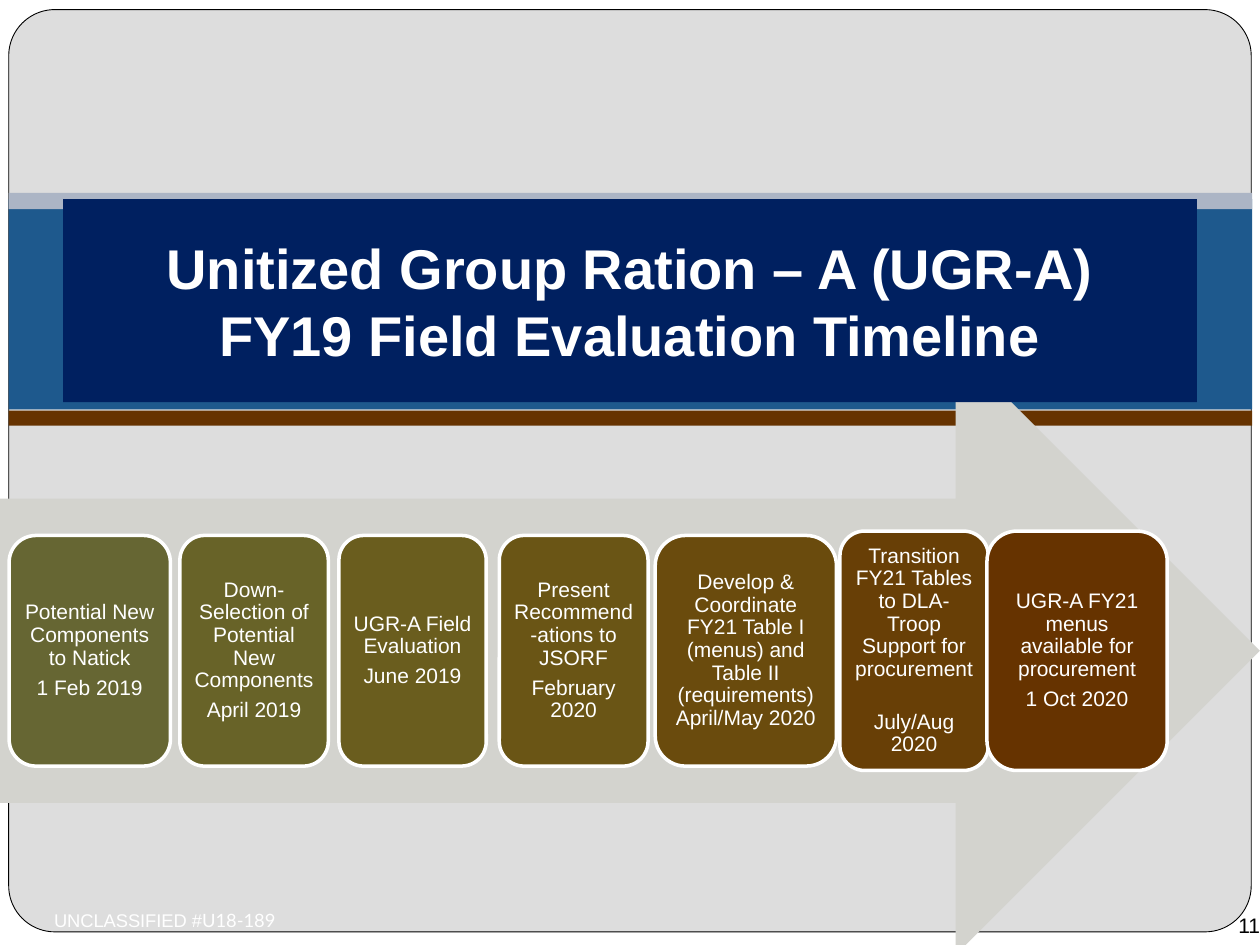
import pptx
import pptx.util
import pptx.oxml.ns
from pptx.dml.color import RGBColor
from pptx.enum.shapes import MSO_SHAPE
from pptx.enum.text import MSO_ANCHOR, MSO_AUTO_SIZE, PP_ALIGN

Pt = pptx.util.Pt

COLORS = {
    "white": "FFFFFF", "black": "000000", "panel": "DDDDDD", "blue": "1E598D",
    "mist": "ACB5C5", "brown": "663300", "arrow": "D3D3CE", "navy": "002060",
}
TITLE = "Unitized Group Ration – A (UGR-A)\vFY19 Field Evaluation Timeline"
BANDS = [("blue", 113.8, 120.2), ("mist", 110.2, 9.4), ("brown", 234.7, 8.6)]
STEPS = [
    (["Potential New Components to Natick", "1 Feb 2019"], "666633", 5.2, 92.2),
    (["Down-Selection of Potential New Components", "April 2019"], "686328", 102.8, 84.8),
    (["UGR-A Field Evaluation", "June 2019"], "6A5D1E", 193.7, 84.2),
    (["Present Recommend-ations to JSORF", "February 2020"], "6A5515", 285.3, 85),
    (["Develop & Coordinate FY21 Table I (menus) and Table II (requirements) April/May 2020"],
     "6A4B0D", 374.4, 103.6),
    (["Transition FY21 Tables to DLA-Troop Support for procurement", "July/Aug 2020"],
     "683F06", 480, 84.8),
    (["UGR-A FY21 menus available for procurement", "1 Oct 2020"], "663300", 564, 103),
]
STEP_CENTER = 371.9
STEP_HEIGHT, LATE_STEP_HEIGHT = 131.8, 136.8
LATE_STEPS_FROM = 5
EXTRA_GAP = {5: 13}


def rgb(name):
    return RGBColor.from_string(COLORS.get(name, name))


def add_block(kind, left, top, width, height, fill, line=None, line_width=0):
    block = slide.shapes.add_shape(kind, Pt(left), Pt(top), Pt(width), Pt(height))
    block.shadow.inherit = False
    block.fill.solid()
    block.fill.fore_color.rgb = rgb(fill)
    if line:
        block.line.color.rgb = rgb(line)
        block.line.width = Pt(line_width)
    else:
        block.line.fill.background()
    return block


def add_label(left, top, width, height):
    label = slide.shapes.add_textbox(Pt(left), Pt(top), Pt(width), Pt(height))
    label.text_frame.word_wrap = True
    return label.text_frame


def set_insets(frame, inset):
    frame.margin_left = frame.margin_right = Pt(inset)
    frame.margin_top = frame.margin_bottom = Pt(inset)


def style_runs(paragraph, size, color, font="Arial", bold=False):
    for run in paragraph.runs:
        run.font.name = font
        run.font.size = Pt(size)
        run.font.bold = bold
        run.font.color.rgb = rgb(color)


deck = pptx.Presentation()
deck.slide_width, deck.slide_height = Pt(720), Pt(540)
slide = deck.slides.add_slide(deck.slide_layouts[5])
slide.background.fill.solid()
slide.background.fill.fore_color.rgb = rgb("white")

panel = add_block(MSO_SHAPE.ROUNDED_RECTANGLE, 5, 5.5, 710, 527, "panel", "black", 0.5)
panel.adjustments[0] = 0.05
for color, top, height in BANDS:
    add_block(MSO_SHAPE.RECTANGLE, 5, top, 710.5, height, color)
add_block(MSO_SHAPE.RIGHT_ARROW, 0, 198, 720, 347.8, "arrow")

for index, (lines, color, left, width) in enumerate(STEPS):
    height = LATE_STEP_HEIGHT if index >= LATE_STEPS_FROM else STEP_HEIGHT
    step = add_block(MSO_SHAPE.ROUNDED_RECTANGLE, left, STEP_CENTER - height / 2,
                     width, height, color, "white", 2)
    frame = step.text_frame
    frame.word_wrap = True
    frame.vertical_anchor = MSO_ANCHOR.MIDDLE
    set_insets(frame, 3.6)
    frame.text = "\n".join(lines)
    for paragraph in frame.paragraphs:
        paragraph.alignment = PP_ALIGN.CENTER
        paragraph.line_spacing = 0.9
        paragraph.space_after = Pt(4.2)
        style_runs(paragraph, 12, "white")
    if index in EXTRA_GAP:
        frame.paragraphs[-1].space_before = Pt(EXTRA_GAP[index])

title = slide.shapes.title
title.left, title.top, title.width, title.height = Pt(36), Pt(113.8), Pt(648), Pt(116)
title.fill.solid()
title.fill.fore_color.rgb = rgb("navy")
title.text_frame.text = TITLE
title.text_frame.word_wrap = True
title.text_frame.vertical_anchor = MSO_ANCHOR.MIDDLE
heading = title.text_frame.paragraphs[0]
heading.alignment = PP_ALIGN.CENTER
style_runs(heading, 32, "white", bold=True)
slide.shapes._spTree.append(title._element)

page_number = add_label(678.2, 517, 41.8, 23)
set_insets(page_number, 0)
page_number.vertical_anchor = MSO_ANCHOR.MIDDLE
page_number.text = "11"
page_number.paragraphs[0].alignment = PP_ALIGN.RIGHT
style_runs(page_number.paragraphs[0], 12, "black")

marking = add_label(23.8, 518.4, 210, 17.3)
marking.auto_size = MSO_AUTO_SIZE.SHAPE_TO_FIT_TEXT
marking_line = marking.paragraphs[0]
marking_line.line_spacing = 0.8
marking_line.space_after = Pt(2.1)
for text in ("UNCLASSIFIED #", "U18-189"):
    marking_line.add_run().text = text
style_runs(marking_line, 10.5, "white")
marking_line.runs[1].font.name = "Lato"

deck.save("out.pptx")
